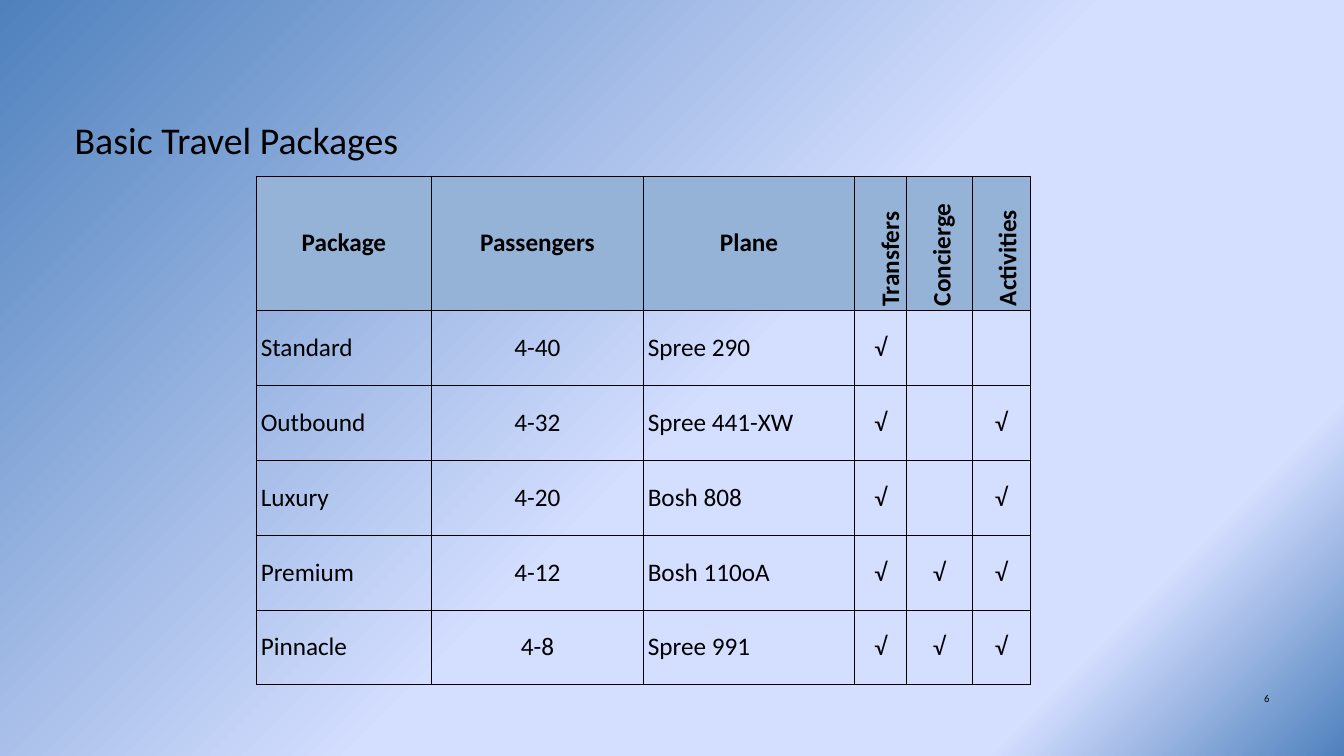
from lxml import etree
from pptx import Presentation
from pptx import util as u
from pptx.dml.color import RGBColor
from pptx.enum import text
from pptx.oxml.ns import qn

TITLE = "Basic Travel Packages"
PAGE_NUMBER = "6"
HEADINGS = ["Package", "Passengers", "Plane", "Transfers", "Concierge", "Activities"]
PACKAGES = [
    ["Standard", "4-40", "Spree 290", "√", "", ""],
    ["Outbound", "4-32", "Spree 441-XW", "√", "", "√"],
    ["Luxury", "4-20", "Bosh 808", "√", "", "√"],
    ["Premium", "4-12", "Bosh 110oA", "√", "√", "√"],
    ["Pinnacle", "4-8", "Spree 991", "√", "√", "√"],
]
COLUMN_WIDTHS = [2.32, 2.8, 2.8, 0.68, 0.87, 0.77]
HEADING_HEIGHT, PACKAGE_HEIGHT = 1.78, 0.99
FIRST_SERVICE = 3  # service columns have upright headings
LEFT_ALIGNED = (0, 2)

FONT, INK, HEADING_FILL = "Calibri", "000000", "95B3D7"
# position %, colour, opacity %
GRADIENT = [(0, "4F81BD", 100), (53, "D4DEFF", 100), (83, "D4DEFF", 100), (100, "4F81BD", 70)]
LEFT, CENTER, RIGHT = text.PP_ALIGN.LEFT, text.PP_ALIGN.CENTER, text.PP_ALIGN.RIGHT


def color(value):
    return RGBColor.from_string(value)


def add_element(parent, tag, **attributes):
    return etree.SubElement(parent, qn(tag), {k: str(v) for k, v in attributes.items()})


def write(frame, words, size, align, bold=False):
    paragraph = frame.paragraphs[0]
    paragraph.text = words
    paragraph.alignment = align
    font = paragraph.font
    font.name, font.size, font.bold = FONT, u.Pt(size), bold
    font.color.rgb = color(INK)


def paint_background(slide):
    fill = slide.background.fill
    fill.gradient()
    fill.gradient_angle = 315
    stops = slide.element.xpath(".//p:bg//a:gsLst")[0]
    for stop in list(stops):
        stops.remove(stop)
    for position, value, opacity in GRADIENT:
        stop = add_element(stops, "a:gs", pos=position * 1000)
        shade = add_element(stop, "a:srgbClr", val=value)
        if opacity < 100:
            add_element(shade, "a:alpha", val=opacity * 1000)


def draw_borders(cell):
    properties = cell._tc.get_or_add_tcPr()
    for place, side in enumerate("LRTB"):
        line = add_element(properties, f"a:ln{side}", w=u.Pt(1))
        add_element(add_element(line, "a:solidFill"), "a:srgbClr", val=INK)
        properties.insert(place, line)


def add_packages(slide):
    heights = [HEADING_HEIGHT] + [PACKAGE_HEIGHT] * len(PACKAGES)
    table = slide.shapes.add_table(
        len(heights), len(COLUMN_WIDTHS), u.Inches(3.39), u.Inches(2.33),
        u.Inches(sum(COLUMN_WIDTHS)), u.Inches(sum(heights))).table
    table.first_row = table.horz_banding = False
    for column, width in zip(table.columns, COLUMN_WIDTHS):
        column.width = u.Inches(width)
    for row, height in zip(table.rows, heights):
        row.height = u.Inches(height)

    for r, entries in enumerate([HEADINGS] + PACKAGES):
        for c, entry in enumerate(entries):
            cell = table.cell(r, c)
            heading = r == 0
            upright = heading and c >= FIRST_SERVICE
            cell.margin_left = cell.margin_right = u.Inches(0.06)
            cell.margin_top = u.Inches(0.27 if upright else 0.07)
            cell.margin_bottom = u.Inches(0.07)
            cell.vertical_anchor = text.MSO_ANCHOR.MIDDLE
            if heading:
                cell.fill.solid()
                cell.fill.fore_color.rgb = color(HEADING_FILL)
            else:
                cell.fill.background()
            if upright:
                cell._tc.get_or_add_tcPr().set("vert", "vert270")
            at_left = upright or (not heading and c in LEFT_ALIGNED)
            write(cell.text_frame, entry, 24, LEFT if at_left else CENTER, heading)
            draw_borders(cell)


def add_text(slide, words, box, size, align, anchor):
    frame = slide.shapes.add_textbox(*map(u.Inches, box)).text_frame
    frame.word_wrap = True
    frame.vertical_anchor = anchor
    write(frame, words, size, align)


def main():
    deck = Presentation()
    deck.slide_width, deck.slide_height = u.Inches(17.78), u.Inches(10)
    slide = deck.slides.add_slide(deck.slide_layouts[6])
    paint_background(slide)
    add_packages(slide)
    add_text(slide, TITLE, (0.89, 0.52, 16, 1.67), 36, LEFT, text.MSO_ANCHOR.BOTTOM)
    add_text(slide, PAGE_NUMBER, (12.74, 9.11, 4.15, 0.69), 10, RIGHT, text.MSO_ANCHOR.TOP)
    deck.save("out.pptx")


if __name__ == "__main__":
    main()
